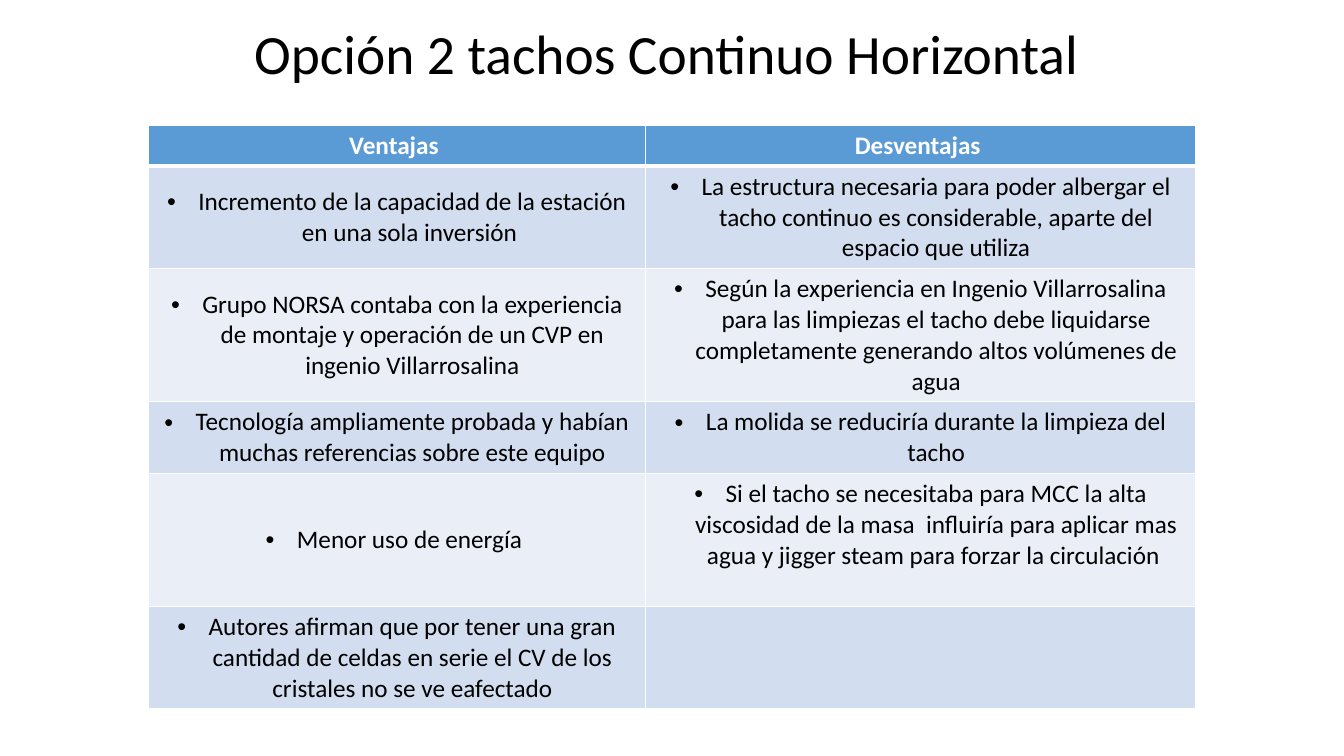
import dataclasses

import lxml.etree
import pptx
import pptx.dml.color
import pptx.enum.text
import pptx.oxml.ns
import pptx.slide
import pptx.table
import pptx.text.text
import pptx.util

Inches = pptx.util.Inches
Pt = pptx.util.Pt
RGBColor = pptx.dml.color.RGBColor
Align = pptx.enum.text.PP_ALIGN
Anchor = pptx.enum.text.MSO_ANCHOR
qn = pptx.oxml.ns.qn

BLACK = RGBColor(0x00, 0x00, 0x00)
WHITE = RGBColor(0xFF, 0xFF, 0xFF)
BLUE = RGBColor(0x5B, 0x9B, 0xD5)
BANDS = (RGBColor(0xD2, 0xDE, 0xEF), RGBColor(0xEA, 0xEF, 0xF7))
FONT = "Calibri"
INDENT = Inches(0.31)


@dataclasses.dataclass
class Row:
    height: float
    pro: str
    con: str
    foot: float = 0.05


HEAD = Row(0.41, "Ventajas ", "Desventajas ")
ROWS = [
    Row(1.01, "Incremento de la capacidad de la estación en una sola inversión ",
        "La estructura necesaria para poder albergar el tacho continuo es "
        "considerable, aparte del espacio que utiliza"),
    Row(1.32, "Grupo NORSA contaba con la experiencia de montaje y operación "
        "de un CVP en ingenio Villarrosalina",
        "Según la experiencia en Ingenio Villarrosalina para las limpiezas el "
        "tacho debe liquidarse completamente generando altos volúmenes de agua"),
    Row(0.71, "Tecnología ampliamente probada y habían muchas referencias "
        "sobre este equipo",
        "La molida se reduciría durante la limpieza del tacho"),
    Row(1.32, "Menor uso de energía ",
        "Si el tacho se necesitaba para MCC la alta viscosidad de la masa  "
        "influiría para aplicar mas agua y jigger steam para forzar la "
        "circulación ", 0.35),
    Row(1.01, "Autores afirman que por tener una gran cantidad de celdas en "
        "serie el CV de los cristales no se ve eafectado", ""),
]


def write(frame: pptx.text.text.TextFrame, text: str, *, size: float = 18,
          color: RGBColor = BLACK, bold: bool = False, bullet: bool = False,
          space: float = 1.0) -> None:
    para = frame.paragraphs[0]
    para.alignment = Align.CENTER
    para.line_spacing = space
    run = para.add_run()
    run.text = text
    run.font.name = FONT
    run.font.size = Pt(size)
    run.font.bold = bold
    run.font.color.rgb = color
    if bullet:
        props = para._p.get_or_add_pPr()
        props.set("marL", str(INDENT))
        props.set("indent", str(-INDENT))
        lxml.etree.SubElement(props, qn("a:buFont")).set("typeface", "Arial")
        lxml.etree.SubElement(props, qn("a:buChar")).set("char", "•")


def border(cell: pptx.table._Cell, base: float) -> None:
    props = cell._tc.get_or_add_tcPr()
    widths = {"a:lnL": 1, "a:lnR": 1, "a:lnT": 1, "a:lnB": base}
    for spot, (tag, width) in enumerate(widths.items()):
        line = lxml.etree.Element(qn(tag), w=str(Pt(width)))
        fill = lxml.etree.SubElement(line, qn("a:solidFill"))
        lxml.etree.SubElement(fill, qn("a:srgbClr")).set("val", str(WHITE))
        props.insert(spot, line)


def shade(cell: pptx.table._Cell, color: RGBColor, base: float = 1) -> None:
    cell.fill.solid()
    cell.fill.fore_color.rgb = color
    border(cell, base)


def title(slide: pptx.slide.Slide, text: str) -> None:
    shape = slide.shapes.title
    shape.left, shape.top = Inches(0.92), Inches(0.22)
    shape.width, shape.height = Inches(11.5), Inches(0.68)
    shape.text_frame.vertical_anchor = Anchor.MIDDLE
    write(shape.text_frame, text, size=39.6, space=0.9)


def grid(slide: pptx.slide.Slide) -> None:
    rows = [HEAD, *ROWS]
    total = sum(row.height for row in rows)
    table = slide.shapes.add_table(len(rows), 2, Inches(1.47), Inches(1.24),
                                   Inches(10.39), Inches(total)).table
    for column, width in zip(table.columns, (4.93, 5.46)):
        column.width = Inches(width)
    for r, row in enumerate(rows):
        table.rows[r].height = Inches(row.height)
        for c, text in enumerate((row.pro, row.con)):
            cell = table.cell(r, c)
            if r == 0:
                shade(cell, BLUE, 3)
                write(cell.text_frame, text, color=WHITE, bold=True)
                continue
            shade(cell, BANDS[(r - 1) % 2])
            cell.vertical_anchor = Anchor.MIDDLE
            if text:
                write(cell.text_frame, text, bullet=True)
        table.cell(r, 1).margin_bottom = Inches(row.foot)


def main() -> None:
    deck = pptx.Presentation()
    deck.slide_width, deck.slide_height = Inches(13.33), Inches(7.5)
    slide = deck.slides.add_slide(deck.slide_layouts[5])
    title(slide, "Opción 2 tachos Continuo Horizontal ")
    grid(slide)
    deck.save("out.pptx")


if __name__ == "__main__":
    main()
